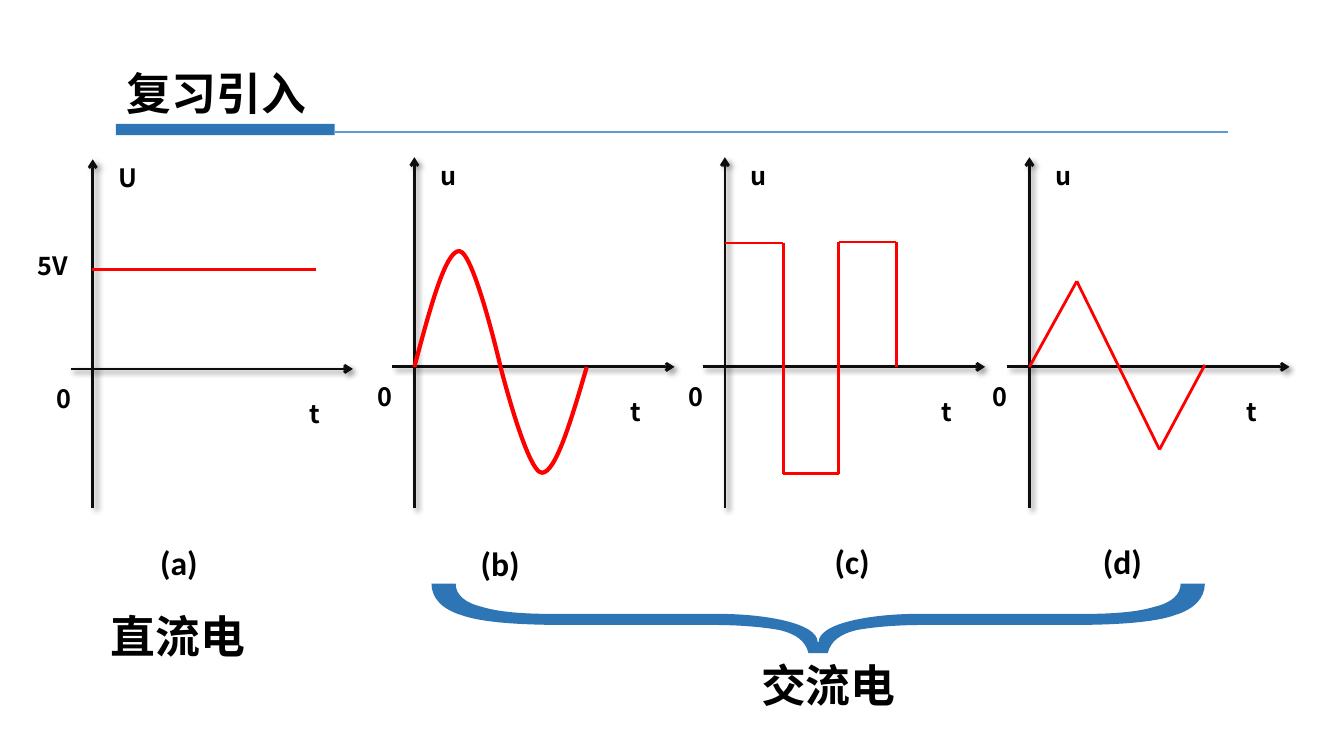
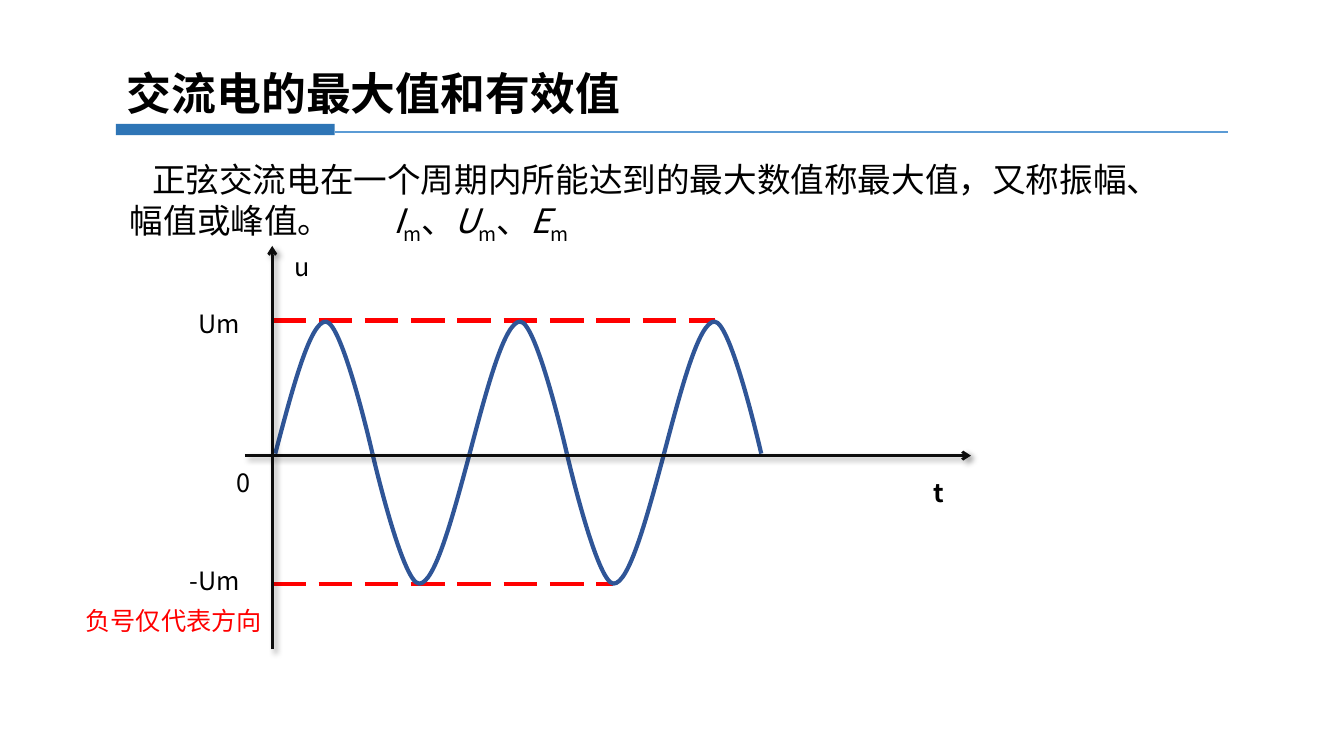
from dataclasses import dataclass
from itertools import islice, pairwise

from lxml import etree
from pptx import Presentation
from pptx import util as u
from pptx.dml.color import RGBColor
from pptx.enum import dml, shapes, text
from pptx.oxml.ns import qn

PX = 9144


@dataclass(frozen=True)
class Theme:
    """Colours, fonts and type sizes of the deck."""
    ink: str = "000000"
    axis: str = "0D0D0D"
    red: str = "FF0000"
    band: str = "2E75B6"
    rule: str = "5B9BD5"
    wave: str = "2F5597"
    font: str = "Noto Sans CJK SC"
    caption_font: str = "Calibri"
    title: int = 32
    body: int = 24
    label: int = 18
    thin: int = 2
    thick: int = 3


THEME = Theme()


def emu(px):
    """Turn px into EMU."""
    return u.Emu(round(px * PX))


def add_child(parent, tag, **attributes):
    """Append an XML element and return it."""
    return etree.SubElement(parent, qn(tag), {k: str(v) for k, v in attributes.items()})


def add_span(para, words, *, size=THEME.label, bold=False, italic=False,
             color=THEME.ink, font=THEME.font, baseline=0, spacing=0):
    """Add formatted text to a paragraph."""
    span = para.add_run()
    span.text = words
    span.font.size = u.Pt(size)
    span.font.bold = bold
    span.font.italic = italic
    span.font.color.rgb = RGBColor.from_string(color)
    span.font.name = font
    properties = span.font._element
    add_child(properties, "a:ea", typeface=font)
    if baseline:
        properties.set("baseline", str(baseline * 1000))
    if spacing:
        properties.set("spc", str(spacing * 100))


class Slides:
    """Draws elements on the current page in the deck's style."""

    def __init__(self, width, height):
        """Start an empty deck."""
        self.deck = Presentation()
        self.deck.slide_width, self.deck.slide_height = emu(width), emu(height)
        self.page = None

    def new_page(self, title, width):
        """Add a page with its title, band and rule."""
        self.page = self.deck.slides.add_slide(self.deck.slide_layouts[6])
        band = self.page.shapes.add_shape(
            shapes.MSO_SHAPE.RECTANGLE, emu(115), emu(123), emu(217), emu(11))
        self.paint(band, fill=THEME.band)
        self.line((332, 131), (1218, 131), THEME.rule)
        self.label(title, 116, 60, width, 64, size=THEME.title, bold=True)

    def paint(self, shape, fill=None, line=None, weight=THEME.thin):
        """Set a shape's fill and outline."""
        shape.shadow.inherit = False
        if fill:
            shape.fill.solid()
            shape.fill.fore_color.rgb = RGBColor.from_string(fill)
        else:
            shape.fill.background()
        if line:
            shape.line.color.rgb = RGBColor.from_string(line)
            shape.line.width = u.Pt(weight)
        else:
            shape.line.fill.background()

    def box(self, x, y, width, height, wrap):
        """Add a text box and return its first paragraph."""
        box = self.page.shapes.add_textbox(emu(x), emu(y), emu(width), emu(height))
        box.text_frame.word_wrap = wrap
        box.text_frame.auto_size = text.MSO_AUTO_SIZE.SHAPE_TO_FIT_TEXT
        return box.text_frame.paragraphs[0]

    def label(self, words, x, y, width, height=40, wrap=False, **style):
        """Add one piece of text."""
        add_span(self.box(x, y, width, height, wrap), words, **style)

    def line(self, start, end, color, weight=THEME.thin, dashed=False, arrow=False):
        """Add a straight line, or a shadowed arrow."""
        line = self.page.shapes.add_connector(
            shapes.MSO_CONNECTOR.STRAIGHT, *map(emu, start + end))
        line.line.color.rgb = RGBColor.from_string(color)
        line.line.width = u.Pt(weight)
        if dashed:
            line.line.dash_style = dml.MSO_LINE.LONG_DASH
        properties = line._element.spPr
        effects = add_child(properties, "a:effectLst")
        if arrow:
            add_child(properties.find(qn("a:ln")), "a:tailEnd", type="arrow")
            shadow = add_child(effects, "a:outerShdw", blurRad=u.Pt(4), dist=u.Pt(3),
                               dir=45 * 60000, algn="tl", rotWithShape=0)
            black = add_child(shadow, "a:srgbClr", val=THEME.ink)
            add_child(black, "a:alpha", val=40000)

    def axes(self, x, y, left, right, up, down):
        """Add two arrows that cross at the origin."""
        self.line((x - left, y), (x + right, y), THEME.axis, arrow=True)
        self.line((x, y + down), (x, y - up), THEME.axis, arrow=True)

    def outline(self, points, sizes, close=False, **style):
        """Add a freeform; each size is 1 point for a line, 3 for a cubic curve."""
        corners = [(emu(x), emu(y)) for x, y in points]
        builder = self.page.shapes.build_freeform(*corners[0])
        builder.add_line_segments(corners[1:], close=close)
        shape = builder.convert_to_shape()
        segments = iter(list(shape._element.iter(qn("a:lnTo"))))
        for size in sizes:
            group = list(islice(segments, size))
            if size == 3:
                curve = etree.Element(qn("a:cubicBezTo"))
                group[0].addprevious(curve)
                for segment in group:
                    curve.append(segment[0])
                    segment.getparent().remove(segment)
        self.paint(shape, **style)

    def wave(self, x, y, span, halves, rise, drop, color):
        """Add a wave whose troughs are its crests turned half round."""
        crest = ((0, 0), (.18, .5), (.36, 1), (.52, 1), (.69, 1), (1, 0), (1, 0))
        trough = [(1 - a, -b) for a, b in reversed(crest)]
        width = span / halves
        for half in range(halves):
            shape, height = (trough, drop) if half % 2 else (crest, rise)
            points = [(x + (half + a) * width, y - b * height) for a, b in shape]
            self.outline(points, (3, 3), line=color, weight=THEME.thick)

    def brace(self):
        """Add the brace, one half mirrored on the other."""
        half = [(812, 637), (812, 618), (865, 609), (910, 609), (1076, 609),
                (1105, 609), (1129, 607), (1145, 602), (1162, 598), (1171, 590), (1171, 579),
                (1195, 579), (1195, 593), (1185, 604), (1166, 610),
                (1147, 617), (1112, 620), (1062, 620), (916, 620),
                (889, 620), (867, 622), (850, 625), (833, 629), (824, 636), (821, 648)]
        sizes = [3, 1, 3, 3, 1, 3, 3, 1, 3, 3]
        mirrored = [(1623 - x, y) for x, y in reversed(half)]
        self.outline(half + mirrored, sizes + [1] + sizes[::-1], close=True, fill=THEME.band)


def review_page(slides):
    """Compare direct current with three alternating currents."""
    slides.new_page("复习引入", 200)
    graphs = (("U", 42, 92, 366), ("u", 37, 411, 364), ("u", 37, 719, 364), ("u", 37, 1021, 364))
    for name, width, x, y in graphs:
        slides.axes(x, y, 22, 258, 208, 504 - y)
        slides.label(name, x + 16, y - 210, width, bold=True)
        slides.label("t", x + 205, y + 24, 31, bold=True)
        slides.label("0", x - 46, y + 9, 38, bold=True)
    slides.label("5V", 27, 243, 59, bold=True)
    slides.line((91, 267), (313, 267), THEME.red)
    slides.wave(411, 364, 171, 2, 115, 105, THEME.red)
    square = [(719, 241), (777, 241), (777, 470), (832, 470), (832, 240), (889, 240), (889, 364)]
    triangle = [(1021, 364), (1068, 279), (1150, 446), (1195, 362)]
    for corners in (square, triangle):
        for start, end in pairwise(corners):
            slides.line(start, end, THEME.red)
    for words, x, y in (("(a)", 149, 533), ("(b)", 467, 534), ("(c)", 818, 532), ("(d)", 1084, 532)):
        slides.label(words, x, y, 284, 50, wrap=True, size=THEME.body, bold=True,
                     font=THEME.caption_font)
    slides.brace()
    for words, x, y in (("交流电", 745, 648), ("直流电", 100, 599)):
        slides.label(words, x, y, 155, 64, size=THEME.title, bold=True)


def peak_page(slides):
    """Show the peak value of a sine wave."""
    slides.new_page("交流电的最大值和有效值", 516)
    for y, end in ((318, 709), (579, 608)):
        slides.line((270, y), (end, y), THEME.red, THEME.thick, dashed=True)
    slides.label("Um", 187, 301, 68)
    slides.label("-Um", 178, 556, 83)
    slides.label("负号仅代表方向", 75, 596, 197, color=THEME.red)

    para = slides.box(119, 153, 1025, 91, wrap=True)
    para._p.get_or_add_pPr().set("indent", str(emu(22)))
    add_span(para, "正弦交流电在一个周期内所能达到的最大数值称最大值，又称振幅、幅值或峰值",
             size=THEME.body)
    add_span(para, "。", size=THEME.body, spacing=44)
    for index, symbol in enumerate("IUE"):
        if index:
            add_span(para, "、", size=THEME.body)
        add_span(para, symbol, size=THEME.body, italic=True)
        add_span(para, "m", size=THEME.body, baseline=-25)

    slides.wave(273, 450, 482, 5, 131, 129, THEME.wave)
    slides.axes(270, 452, 27, 693, 208, 192)
    slides.label("u", 282, 244, 37)
    slides.label("t", 916, 469, 31, bold=True)
    slides.label("0", 225, 459, 38)


def main():
    """Build and save the deck."""
    slides = Slides(1333, 750)
    review_page(slides)
    peak_page(slides)
    slides.deck.save("out.pptx")


if __name__ == "__main__":
    main()
